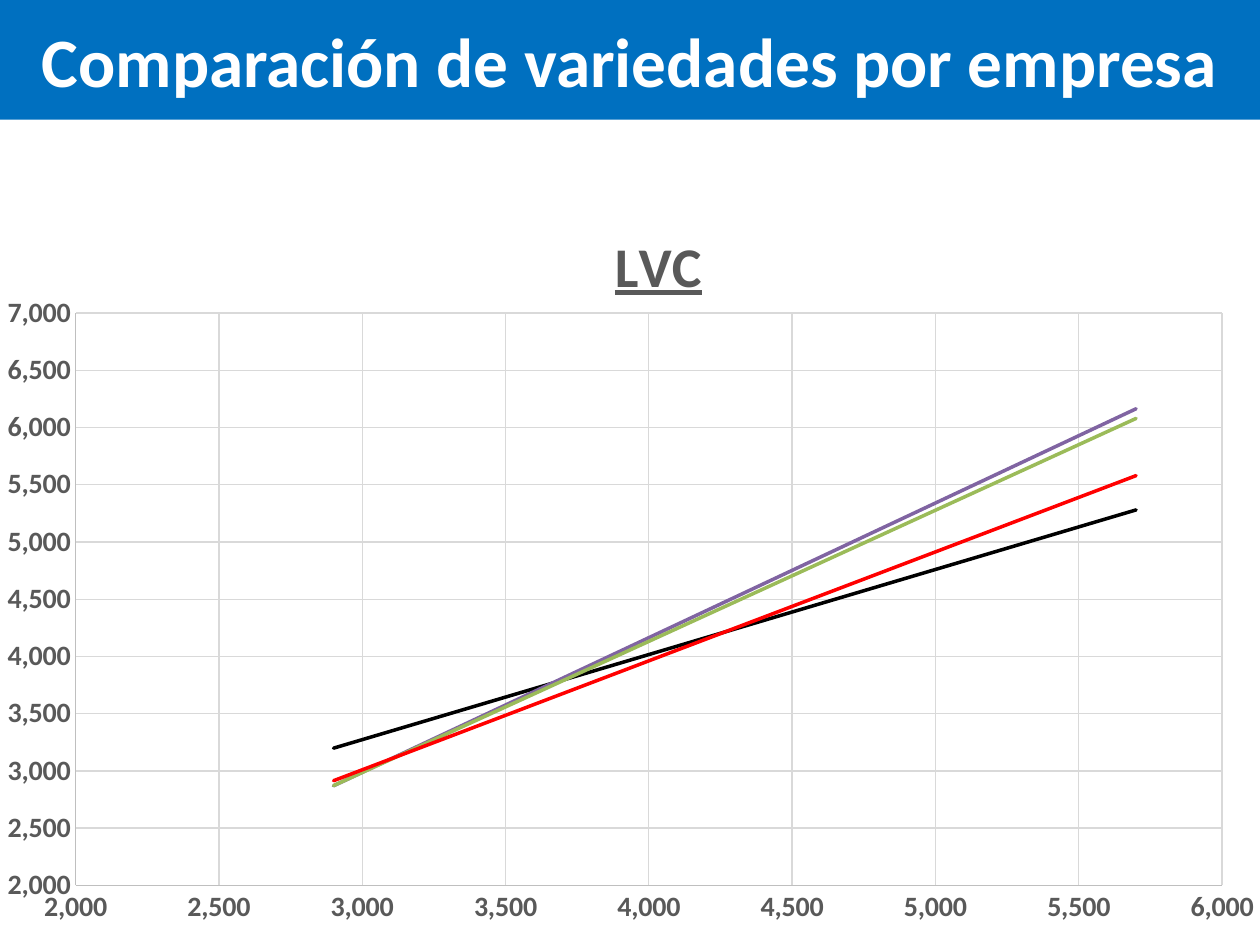
from dataclasses import dataclass

from pptx import Presentation
from pptx.chart.data import XyChartData
from pptx.dml.color import RGBColor
from pptx.enum.chart import XL_CHART_TYPE, XL_MARKER_STYLE, XL_TICK_MARK
from pptx.enum.text import MSO_ANCHOR, MSO_AUTO_SIZE, PP_ALIGN
from pptx.oxml import parse_xml
from pptx.oxml.ns import nsdecls
from pptx.util import Inches, Pt


@dataclass(frozen=True)
class Theme:
    """Colours and type sizes of the slide."""
    font: str = "Calibri"
    banner: str = "0070C0"
    banner_text: str = "FFFFFF"
    label: str = "595959"
    axis: str = "BFBFBF"
    grid: str = "D9D9D9"
    heading_size: float = 39.6
    chart_title_size: int = 32
    label_size: int = 16
    hairline: float = 0.75
    trend_width: int = 2


THEME = Theme()
ENVIRONMENT_YIELDS = [4400, 5600, 5500, 4600, 4500, 4400,
                      4400, 5700, 4500, 4600, 3900, 2900]
VARIETIES = [
    ("Series 1", "FF0000", [4200, 5200, 5400, 5100, 3900, 4800,
                            4200, 5400, 4700, 4900, 3700, 2700]),
    ("Series 2", "9BBB59", [4300, 6400, 5400, 5200, 5300, 4900,
                            4700, 5700, 4800, 4600, 3500, 2800]),
    ("Series 3", "8064A2", [5300, 6500, 6500, 3600, 4500, 4300,
                            4900, 5900, 4500, 4600, 4600, 3000]),
    ("Series 4", "000000", [4100, 5200, 5200, 3800, 5100, 4200,
                            4500, 5500, 4100, 4300, 4100, 3300]),
]


def style_font(font, size, color):
    """Apply the bold theme face in a given size and colour."""
    font.name, font.size, font.bold = THEME.font, Pt(size), True
    font.color.rgb = RGBColor.from_string(color)


def style_line(line, color):
    """Draw a hairline in a given colour."""
    line.width = Pt(THEME.hairline)
    line.color.rgb = RGBColor.from_string(color)


def set_layout(element, target="", **shares):
    """Replace the layout of a chart part with shares of the chart's size."""
    modes = "".join(f'<c:{axis}Mode val="edge"/>' for axis in "xy")
    values = "".join(f'<c:{key} val="{share}"/>' for key, share in shares.items())
    layout = parse_xml(f'<c:layout {nsdecls("c")}><c:manualLayout>{target}{modes}'
                       f'{values}</c:manualLayout></c:layout>')
    for previous in element.xpath("c:layout"):
        element.remove(previous)
    element.insert(len(element.xpath("c:tx")), layout)


def add_trend(series, color):
    """Hide the points of a series and show its linear trend."""
    series.format.line.fill.background()
    series.marker.style = XL_MARKER_STYLE.NONE
    trend = parse_xml(
        f'<c:trendline {nsdecls("c", "a")}><c:spPr>'
        f'<a:ln w="{Pt(THEME.trend_width)}" cap="rnd"><a:solidFill>'
        f'<a:srgbClr val="{color}"/></a:solidFill></a:ln></c:spPr>'
        '<c:trendlineType val="linear"/><c:dispRSqr val="0"/>'
        '<c:dispEq val="0"/></c:trendline>')
    series._element.xpath("c:xVal")[0].addprevious(trend)


def style_axis(axis, maximum):
    """Format an axis from 2,000 up to its maximum with a grid."""
    axis.minimum_scale, axis.maximum_scale, axis.major_unit = 2000, maximum, 500
    axis.major_tick_mark = axis.minor_tick_mark = XL_TICK_MARK.NONE
    axis.has_major_gridlines = True
    style_line(axis.major_gridlines.format.line, THEME.grid)
    style_line(axis.format.line, THEME.axis)
    style_font(axis.tick_labels.font, THEME.label_size, THEME.label)
    axis.tick_labels.number_format = "#,##0"
    axis.tick_labels.number_format_is_linked = False


def add_banner(slide, box, text):
    """Turn the title placeholder into a full-width banner."""
    banner = slide.shapes.title
    banner.left, banner.top, banner.width, banner.height = box
    banner.fill.solid()
    banner.fill.fore_color.rgb = RGBColor.from_string(THEME.banner)
    frame = banner.text_frame
    frame.text = text
    frame.word_wrap = True
    frame.auto_size = MSO_AUTO_SIZE.NONE
    frame.vertical_anchor = MSO_ANCHOR.MIDDLE
    heading = frame.paragraphs[0]
    heading.alignment = PP_ALIGN.CENTER
    style_font(heading.font, THEME.heading_size, THEME.banner_text)


def add_comparison(slide, box, company):
    """Chart the yield trend of each variety of a company."""
    data = XyChartData()
    for name, _, yields in VARIETIES:
        variety = data.add_series(name)
        for environment, result in zip(ENVIRONMENT_YIELDS, yields):
            variety.add_data_point(environment, result)
    chart = slide.shapes.add_chart(XL_CHART_TYPE.XY_SCATTER, *box, data).chart
    chart.font.name = THEME.font
    chart.has_legend = False
    chart.plots[0].vary_by_categories = False
    for series, (_, color, _) in zip(chart.plots[0].series, VARIETIES):
        add_trend(series, color)
    style_axis(chart.category_axis, 6000)
    style_axis(chart.value_axis, 7000)

    chart.has_title = True
    chart.chart_title.text_frame.text = company
    title_font = chart.chart_title.text_frame.paragraphs[0].font
    style_font(title_font, THEME.chart_title_size, THEME.label)
    title_font.underline = True
    set_layout(chart.chart_title._element, x=0.48, y=0.02)
    set_layout(chart._chartSpace.xpath("c:chart/c:plotArea")[0],
               '<c:layoutTarget val="inner"/>', x=0.06, y=0.15, w=0.91, h=0.77)


def main():
    """Build and save the variety comparison slide."""
    deck = Presentation()
    deck.slide_width, deck.slide_height = Inches(10), Inches(7.5)
    slide = deck.slides.add_slide(deck.slide_layouts[5])
    width, height = deck.slide_width, deck.slide_height
    banner_height, chart_top = Inches(0.95), Inches(1.6)
    add_banner(slide, (0, 0, width, banner_height),
               "Comparación de variedades por empresa")
    add_comparison(slide, (0, chart_top, width, height - chart_top), "LVC")
    deck.save("out.pptx")


if __name__ == "__main__":
    main()
